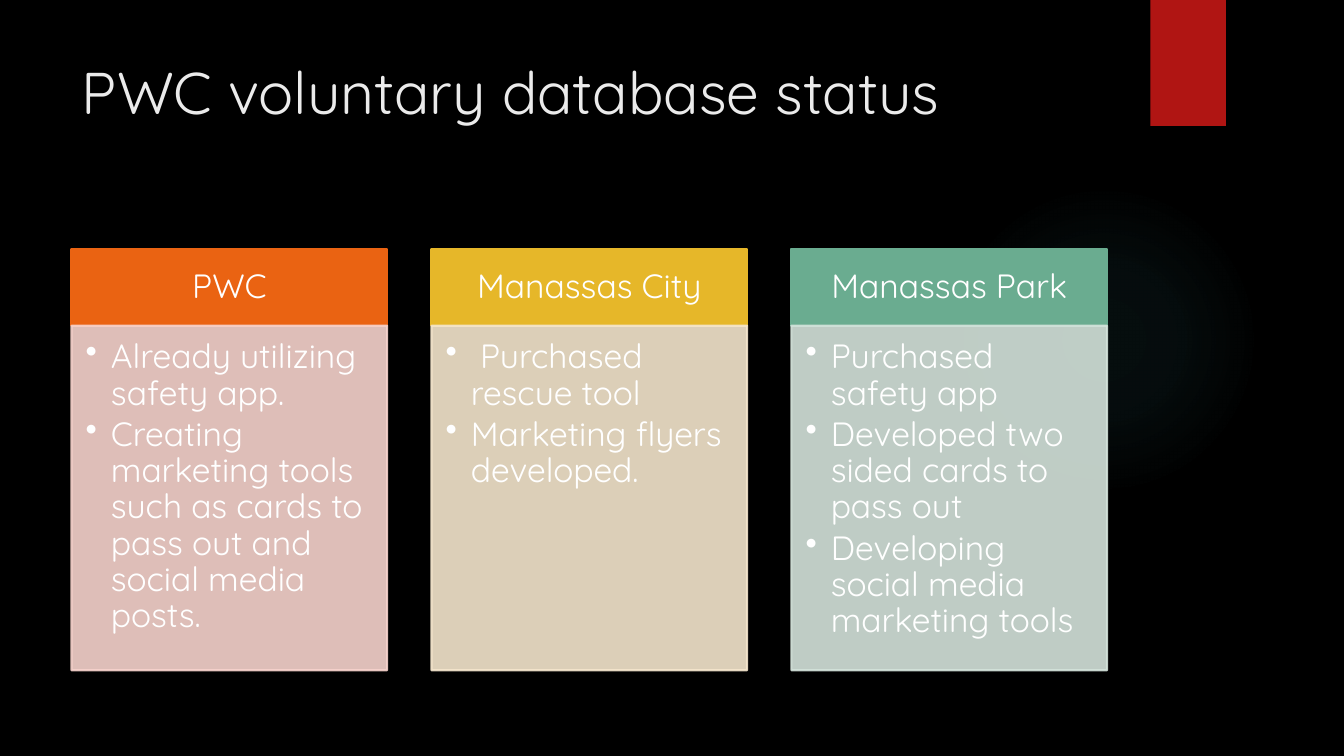
from lxml.etree import SubElement
from pptx import Presentation
from pptx.dml.color import RGBColor
from pptx.enum.shapes import MSO_SHAPE
from pptx.enum.text import MSO_ANCHOR, PP_ALIGN
from pptx.oxml import parse_xml
from pptx.oxml.ns import nsdecls, qn
from pptx.util import Inches, Pt

TITLE = "PWC voluntary database status"
AGENCIES = [
    ("PWC", "orange", "peach", [
        "Already utilizing safety app.",
        "Creating marketing tools such as cards to pass out and social media posts.",
    ]),
    ("Manassas City", "gold", "cream", [
        " Purchased rescue tool",
        "Marketing flyers developed.",
    ]),
    ("Manassas Park", "green", "mint", [
        "Purchased safety app",
        "Developed two sided cards to pass out",
        "Developing social media marketing tools",
    ]),
]
COLORS = {
    "black": "000000", "white": "FFFFFF", "title": "EBEBEB", "red": "B01513", "teal": "50B9C1",
    "orange": "EA6312", "gold": "E6B729", "green": "6AAC90",
    "peach": "F7D3CC", "cream": "F5E6CD", "mint": "D4E3DB",
}
GLOW_STOPS = [(0, 7), (36, 6), (69, 0)]
FONT = "Quicksand"
LEFT, COLUMN_WIDTH, COLUMN_STEP = 0.71, 3.13, 3.57
HEADER_TOP, HEADER_HEIGHT, BODY_HEIGHT = 2.47, 0.76, 3.42
BODY_TOP = HEADER_TOP + HEADER_HEIGHT


def rgb(name):
    return RGBColor.from_string(COLORS[name])


def set_alpha(fill_parent, percent):
    for color in fill_parent.iter(qn("a:srgbClr")):
        SubElement(color, qn("a:alpha")).set("val", str(percent * 1000))


def add_block(kind, left, top, width, height, color, line_width=0, opacity=100):
    block = slide.shapes.add_shape(kind, Inches(left), Inches(top), Inches(width), Inches(height))
    block.shadow.inherit = False
    block.fill.solid()
    block.fill.fore_color.rgb = rgb(color)
    if line_width:
        block.line.color.rgb = rgb(color)
        block.line.width = Pt(line_width)
    else:
        block.line.fill.background()
    if opacity < 100:
        set_alpha(block._element.spPr, opacity)
    return block


def write(frame, lines, size=24, color="white", align=PP_ALIGN.LEFT, anchor=MSO_ANCHOR.TOP,
          insets=(0.1, 0.05, 0.1, 0.05), spacing=0.9, after=0, bullet=None):
    frame.word_wrap = True
    frame.vertical_anchor = anchor
    frame.margin_left, frame.margin_top, frame.margin_right, frame.margin_bottom = map(Inches, insets)
    for index, line in enumerate(lines):
        paragraph = frame.add_paragraph() if index else frame.paragraphs[0]
        paragraph.text = line
        paragraph.alignment = align
        paragraph.line_spacing = spacing
        paragraph.space_before = Pt(0)
        paragraph.space_after = Pt(after)
        if bullet:
            properties = paragraph._p.get_or_add_pPr()
            properties.set("marL", str(Inches(0.25)))
            properties.set("indent", str(-Inches(0.25)))
            SubElement(properties, qn("a:buChar")).set("char", bullet)
        font = paragraph.runs[0].font
        font.name, font.size, font.color.rgb = FONT, Pt(size), rgb(color)


presentation = Presentation()
presentation.slide_width, presentation.slide_height = Inches(13.33), Inches(7.5)
slide = presentation.slides.add_slide(presentation.slide_layouts[5])
slide.background.fill.solid()
slide.background.fill.fore_color.rgb = rgb("black")

title = slide.shapes.title
title.left, title.top, title.width, title.height = map(Inches, (LEFT, 0.5, 10.29, 1.53))
write(title.text_frame, [TITLE], size=42, color="title", spacing=1.0)

glow = add_block(MSO_SHAPE.OVAL, 9.41, 1.83, 3.08, 3.08, "teal")
stops = "".join(
    f'<a:gs pos="{position * 1000}"><a:srgbClr val="{COLORS["teal"]}">'
    f'<a:alpha val="{alpha * 1000}"/></a:srgbClr></a:gs>'
    for position, alpha in GLOW_STOPS
)
gradient = parse_xml(
    f'<a:gradFill {nsdecls("a")}><a:gsLst>{stops}</a:gsLst><a:path path="circle">'
    '<a:fillToRect l="50000" t="50000" r="50000" b="50000"/></a:path></a:gradFill>'
)
glow_properties = glow._element.spPr
glow_properties.replace(glow_properties.find(qn("a:solidFill")), gradient)

add_block(MSO_SHAPE.RECTANGLE, 11.41, 0, 0.75, 1.25, "red")

for column, (agency, header_color, body_color, actions) in enumerate(AGENCIES):
    left = LEFT + column * COLUMN_STEP
    header = add_block(MSO_SHAPE.RECTANGLE, left, HEADER_TOP, COLUMN_WIDTH, HEADER_HEIGHT,
                       header_color, line_width=1.5)
    write(header.text_frame, [agency], align=PP_ALIGN.CENTER, anchor=MSO_ANCHOR.MIDDLE,
          insets=(0.19, 0.11, 0.19, 0.11))
    body = add_block(MSO_SHAPE.RECTANGLE, left, BODY_TOP, COLUMN_WIDTH, BODY_HEIGHT,
                     body_color, line_width=1.5, opacity=90)
    write(body.text_frame, actions, insets=(0.14, 0.14, 0.19, 0.21), after=3.6, bullet="•")

presentation.save("out.pptx")
